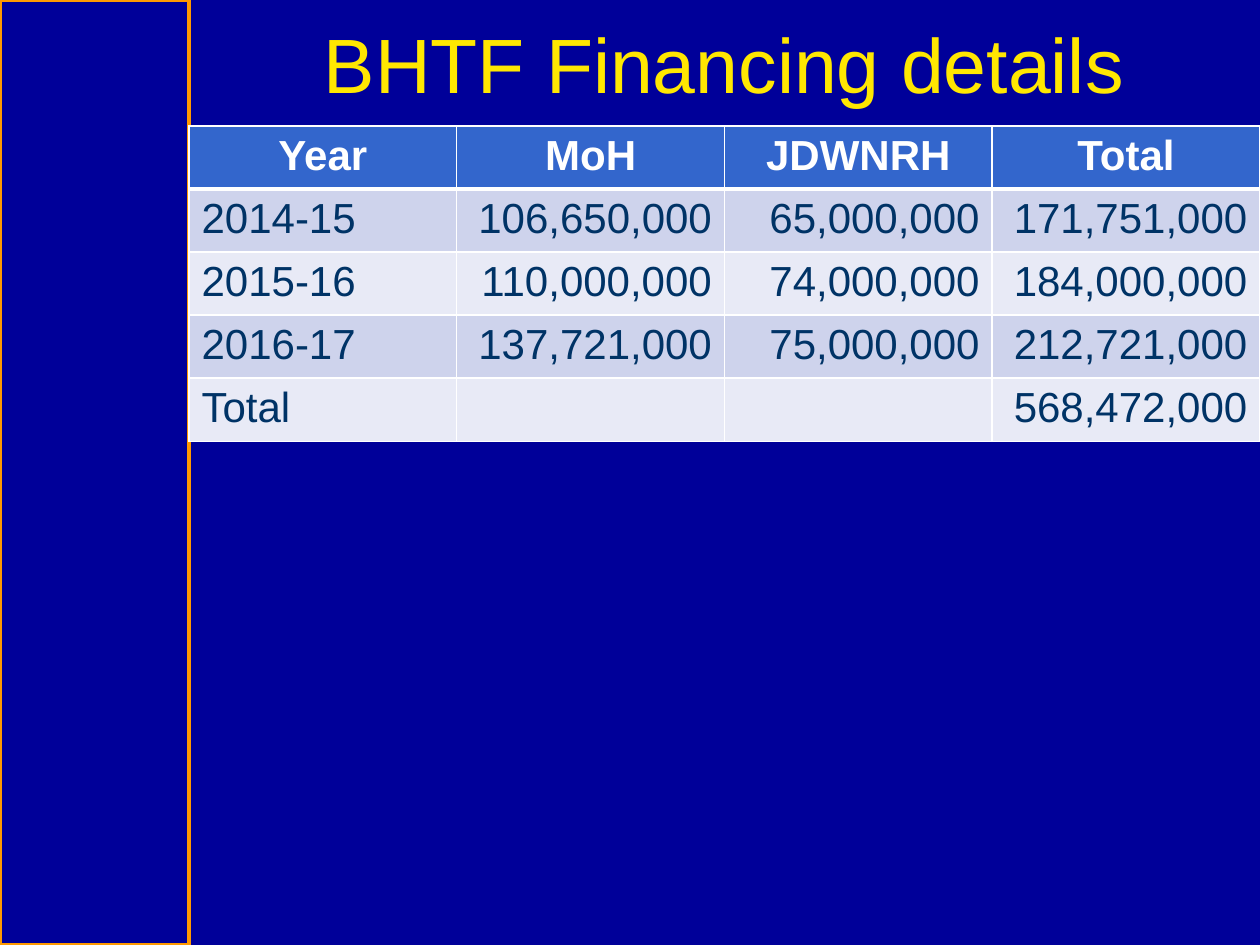
import pptx
import pptx.util
import pptx.dml.color
import pptx.enum.shapes
import pptx.enum.text
import pptx.oxml
import pptx.oxml.ns

SCALE = 914400 // 126
ALIGN = pptx.enum.text.PP_ALIGN
ROWS = [
    ["Year", "MoH", "JDWNRH", "Total"],
    ["2014-15", "106,650,000", "65,000,000", "171,751,000"],
    ["2015-16", "110,000,000", "74,000,000", "184,000,000"],
    ["2016-17", "137,721,000", "75,000,000", "212,721,000"],
    ["Total", "", "", "568,472,000"],
]


def px(n):
    return pptx.util.Emu(n * SCALE)


def color(code):
    return pptx.dml.color.RGBColor.from_string(code)


def paint(fill, code):
    fill.solid()
    fill.fore_color.rgb = color(code)


def style(para, text, size, code, align, bold=False):
    para.text = text
    para.alignment = align
    font = para.font
    font.name = "Arial"
    font.size = pptx.util.Pt(size)
    font.bold = bold
    font.color.rgb = color(code)


def add_bar(slide, x, y, w, h):
    kind = pptx.enum.shapes.MSO_SHAPE.RECTANGLE
    bar = slide.shapes.add_shape(kind, px(x), px(y), px(w), px(h))
    bar.shadow.inherit = False
    bar.fill.background()
    bar.line.color.rgb = color("FF9900")
    bar.line.width = pptx.util.Pt(2)


def add_title(slide, text, x, y, w, h):
    frame = slide.shapes.add_textbox(px(x), px(y), px(w), px(h)).text_frame
    frame.word_wrap = True
    frame.vertical_anchor = pptx.enum.text.MSO_ANCHOR.MIDDLE
    style(frame.paragraphs[0], text, 44, "FFE701", ALIGN.CENTER)


def add_edge(cell, side, width):
    line = pptx.oxml.parse_xml(
        f'<a:ln{side} {pptx.oxml.ns.nsdecls("a")} w="{pptx.util.Pt(width)}">'
        '<a:solidFill><a:srgbClr val="FFFFFF"/></a:solidFill>'
        f'</a:ln{side}>')
    cell._tc.get_or_add_tcPr().append(line)


def add_cell(cell, text, row, col):
    head = row == 0
    # Thick rule between the header and the body
    thick = {(0, "B"), (1, "T")}
    for side in "LRTB":
        add_edge(cell, side, 3 if (row, side) in thick else 1)
    band = "CED3EC" if row % 2 else "E8EAF6"
    paint(cell.fill, "3366CC" if head else band)
    if head:
        align = ALIGN.CENTER
    else:
        align = ALIGN.RIGHT if col else ALIGN.LEFT
    ink = "FFFFFF" if head else "003366"
    style(cell.text_frame.paragraphs[0], text, 24, ink, align, head)


def add_grid(slide, rows, x, y, w, h):
    count = len(rows[0])
    grid = slide.shapes.add_table(
        len(rows), count, px(x), px(y), px(w), px(h)).table
    for r, texts in enumerate(rows):
        for c, text in enumerate(texts):
            add_cell(grid.cell(r, c), text, r, c)


def main():
    deck = pptx.Presentation()
    deck.slide_width, deck.slide_height = px(1260), px(945)
    slide = deck.slides.add_slide(deck.slide_layouts[6])
    paint(slide.background.fill, "000099")

    # Side panel, heading and figures
    add_bar(slide, 0, 0, 189, 945)
    add_title(slide, "BHTF Financing details", 189, 0, 1071, 126)
    add_grid(slide, ROWS, 189, 126, 1071, 297)
    deck.save("out.pptx")


if __name__ == "__main__":
    main()
